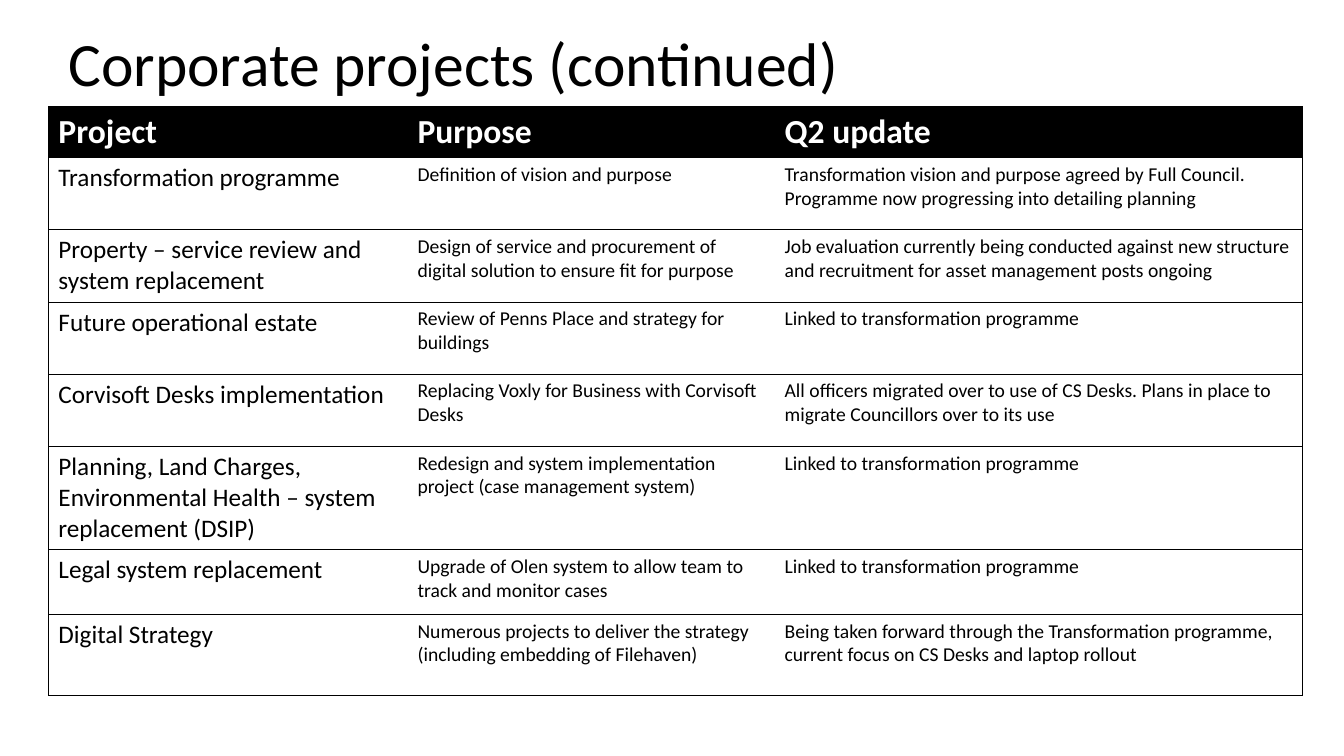
from lxml import etree
from pptx import Presentation
from pptx.dml.color import RGBColor
from pptx.enum.text import MSO_ANCHOR, PP_ALIGN
from pptx.oxml.ns import qn
from pptx.util import Cm, Pt

LEFT = PP_ALIGN.LEFT
TOP, MIDDLE = MSO_ANCHOR.TOP, MSO_ANCHOR.MIDDLE
TITLE_ONLY = 5

COLORS = {"ink": "000000", "paper": "FFFFFF"}

HEADINGS = ("Project", "Purpose", "Q2 update")
LINKED = "Linked to transformation programme"
PROJECTS = [
    ("Transformation programme",
     "Definition of vision and purpose",
     "Transformation vision and purpose agreed by Full Council. "
     "Programme now progressing into detailing planning"),
    ("Property – service review and system replacement",
     "Design of service and procurement of digital solution to ensure fit for purpose",
     "Job evaluation currently being conducted against new structure "
     "and recruitment for asset management posts ongoing"),
    ("Future operational estate",
     "Review of Penns Place and strategy for buildings",
     LINKED),
    ("Corvisoft Desks implementation",
     "Replacing Voxly for Business with Corvisoft Desks",
     "All officers migrated over to use of CS Desks. "
     "Plans in place to migrate Councillors over to its use"),
    ("Planning, Land Charges, Environmental Health – system replacement (DSIP)",
     "Redesign and system implementation project (case management system)",
     LINKED),
    ("Legal system replacement",
     "Upgrade of Olen system to allow team to track and monitor cases",
     LINKED),
    ("Digital Strategy",
     "Numerous projects to deliver the strategy (including embedding of Filehaven)",
     "Being taken forward through the Transformation programme, "
     "current focus on CS Desks and laptop rollout"),
]
COLUMN_WIDTHS = (9.05, 9.25, 13.29)
ROW_HEIGHTS = (1.29, 1.82, 1.82, 1.82, 1.82, 2.6, 1.63, 2.05)


class SlideBuilder:
    """Holds the text style and the slide being filled."""

    def __init__(self, slide, font="Calibri"):
        self.slide = slide
        self.font = font

    def add_text(self, paragraph, text, size, color, bold=False):
        run = paragraph.add_run()
        run.text = text
        run.font.name = self.font
        run.font.size = Pt(size)
        run.font.bold = bold
        run.font.color.rgb = RGBColor.from_string(COLORS[color])

    def title(self, text, left, top, width, height):
        heading = self.slide.shapes.title
        heading.left, heading.top = Cm(left), Cm(top)
        heading.width, heading.height = Cm(width), Cm(height)
        heading.text_frame.vertical_anchor = MIDDLE
        paragraph = heading.text_frame.paragraphs[0]
        paragraph.alignment = LEFT
        paragraph.line_spacing = 0.9
        self.add_text(paragraph, text, 44, "ink")

    def borders(self, cell, drawn):
        """Rule the sides in drawn and clear the others."""
        properties = cell._tc.get_or_add_tcPr()
        for position, side in enumerate("LRTB"):
            line = etree.Element(qn("a:ln" + side), w=str(Pt(0.5)))
            if side in drawn:
                fill = etree.SubElement(line, qn("a:solidFill"))
                etree.SubElement(fill, qn("a:srgbClr"), val=COLORS["ink"])
            else:
                etree.SubElement(line, qn("a:noFill"))
            properties.insert(position, line)

    def cell(self, cell, text, size, color, fill, drawn, bold=False):
        cell.fill.solid()
        cell.fill.fore_color.rgb = RGBColor.from_string(COLORS[fill])
        cell.vertical_anchor = TOP
        self.borders(cell, drawn)
        self.add_text(cell.text_frame.paragraphs[0], text, size, color, bold)

    def table(self, rows, left, top, widths, heights):
        table = self.slide.shapes.add_table(
            len(rows), len(widths), Cm(left), Cm(top),
            Cm(sum(widths)), Cm(sum(heights))).table
        table.horz_banding = False
        for column, width in zip(table.columns, widths):
            column.width = Cm(width)
        for row, height in zip(table.rows, heights):
            row.height = Cm(height)
        last = len(widths) - 1
        for r, texts in enumerate(rows):
            for c, text in enumerate(texts):
                drawn = "TB" + ("L" if c == 0 else "") + ("R" if c == last else "")
                if r == 0:
                    self.cell(table.cell(r, c), text, 24, "paper", "ink", drawn, True)
                else:
                    size = 18 if c == 0 else 14
                    self.cell(table.cell(r, c), text, size, "ink", "paper", drawn)


def main():
    prs = Presentation()
    prs.slide_width, prs.slide_height = Cm(33.87), Cm(19.05)
    builder = SlideBuilder(prs.slides.add_slide(prs.slide_layouts[TITLE_ONLY]))

    # Heading
    builder.title("Corporate projects (continued)", 1.47, 0.28, 29.21, 2.79)

    # Project status table
    builder.table([HEADINGS, *PROJECTS], 1.22, 2.68, COLUMN_WIDTHS, ROW_HEIGHTS)

    prs.save("out.pptx")


if __name__ == "__main__":
    main()
